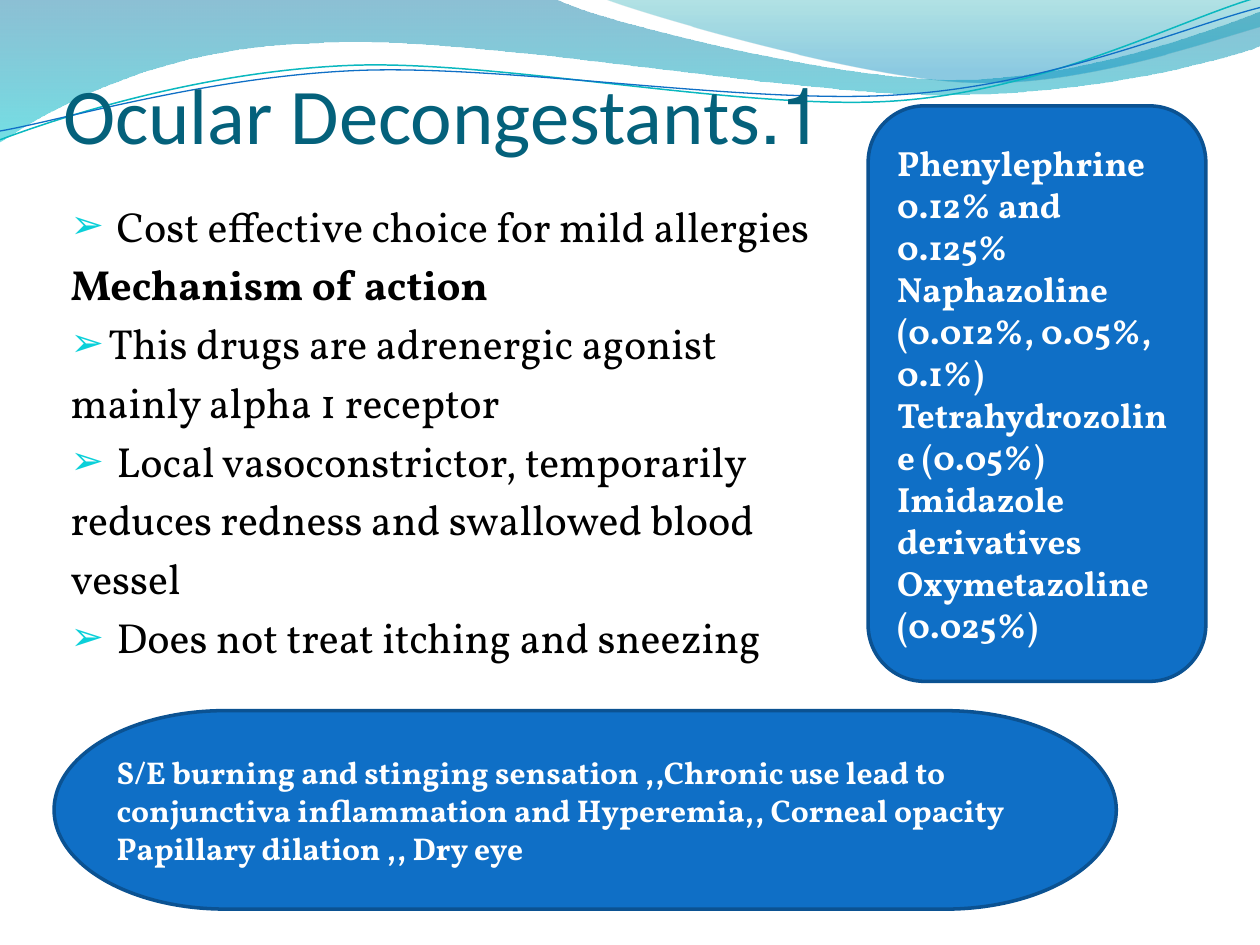
from lxml.etree import Element, SubElement
from pptx import Presentation
from pptx.dml.color import RGBColor
from pptx.enum.shapes import MSO_SHAPE as Preset
from pptx.enum.text import MSO_ANCHOR as Anchor, MSO_AUTO_SIZE as AutoSize, PP_ALIGN as Align
from pptx.oxml.ns import qn
from pptx.util import Inches, Pt

WIDTH, HEIGHT = Inches(10), Inches(7.5)
BLUE, BLUE_EDGE, WHITE = "0F6FC6", "0B5292", "FFFFFF"

TOP_WAVE = [
    (0, 0), (4.4, -0.01),
    (4.76, 0.17, 6.64, 0.63, 7.58, 0.63), (8.53, 0.63, 9.58, 0.26, 10, 0.09),
    (10.01, 0.36),
    (9.83, 0.44, 8.7, 0.76, 7.46, 0.75), (6.22, 0.75, 3.82, 0.28, 2.57, 0.34),
    (1.29, 0.36, 0.46, 0.83, -0.01, 1.13),
]
RIGHT_WAVE = [
    (4.79, -0.01),
    (5.09, 0.11, 6.82, 0.62, 7.69, 0.65), (8.56, 0.69, 9.61, 0.32, 10, 0.21),
    (10, 0),
]
TEAL_CURVE = [
    (0, 1.11),
    (0.48, 0.93, 1.58, 0.57, 2.77, 0.52), (3.95, 0.47, 5.93, 0.89, 7.13, 0.8),
    (8.33, 0.71, 9.38, 0.15, 9.98, -0.02),
]
BLUE_CURVE = [
    (0, 1.04),
    (0.47, 0.96, 1.64, 0.61, 2.83, 0.56), (4.03, 0.51, 5.97, 0.84, 7.17, 0.75),
    (8.36, 0.67, 9.41, 0.21, 10, 0.06),
]
BODY = [
    (" Cost effective choice for mild allergies", True, False),
    ("Mechanism of action", False, True),
    ("This drugs are adrenergic agonist", True, False),
    ("mainly alpha 1 receptor", False, False),
    (" Local vasoconstrictor, temporarily", True, False),
    ("reduces redness and swallowed blood", False, False),
    ("vessel", False, False),
    (" Does not treat itching and sneezing", True, False),
]
DRUGS = [
    "Phenylephrine 0.12% and 0.125%",
    "Naphazoline (0.012%, 0.05%, 0.1%) Tetrahydrozoline (0.05%) Imidazole derivatives",
    "Oxymetazoline (0.025%)",
]
SIDE_EFFECTS = [
    "S/E burning and stinging sensation ,,Chronic use lead to conjunctiva "
    "inflammation and Hyperemia,, Corneal opacity Papillary dilation ,, Dry eye",
]


def color(value):
    return RGBColor.from_string(value)


def apply(target, formats):
    for name, value in formats.items():
        setattr(target, name, value)


def share(left, top, width, height):
    return [int(WIDTH * left), int(HEIGHT * top), int(WIDTH * width), int(HEIGHT * height)]


def set_font(paragraph, name, size, value, bold=False):
    apply(paragraph.font, {"name": name, "size": Pt(size), "bold": bold})
    paragraph.font.color.rgb = color(value)


def set_right_to_left(paragraph):
    paragraph.alignment = Align.LEFT
    paragraph._p.get_or_add_pPr().set("rtl", "1")


def set_bullet(paragraph, bulleted):
    properties = paragraph._p.get_or_add_pPr()
    indent = Inches(0.3) if bulleted else 0
    properties.set("marL", str(indent))
    properties.set("indent", str(-indent))
    if not bulleted:
        SubElement(properties, qn("a:buNone"))
        return
    tint = SubElement(properties, qn("a:buClr"))
    SubElement(tint, qn("a:srgbClr"), val="0BD0D9")
    SubElement(properties, qn("a:buSzPct"), val="95000")
    SubElement(properties, qn("a:buChar"), char="➢")


def bend(shape, segments):
    lines = shape._element.spPr.iter(qn("a:lnTo"))
    remaining = list(lines)
    for segment in segments:
        count = len(segment) // 2
        group, remaining = remaining[:count], remaining[count:]
        if count == 3:
            curve = Element(qn("a:cubicBezTo"))
            group[0].addprevious(curve)
            for line in group:
                curve.append(line[0])
                line.getparent().remove(line)


def add_outline(slide, segments, close):
    points = [(Inches(x), Inches(y)) for segment in segments
              for x, y in zip(segment[::2], segment[1::2])]
    builder = slide.shapes.build_freeform(*points[0])
    builder.add_line_segments(points[1:], close=close)
    shape = builder.convert_to_shape()
    bend(shape, segments[1:])
    shape.shadow.inherit = False
    return shape


def add_wave(slide, segments, stops):
    shape = add_outline(slide, segments, True)
    shape.line.fill.background()
    shape.fill.gradient()
    shape.fill.gradient_angle = 270
    for stop, (position, value, opacity) in zip(shape.fill.gradient_stops, stops):
        stop.position = position
        stop.color.rgb = color(value)
    tints = shape._element.spPr.iter(qn("a:srgbClr"))
    for tint, (position, value, opacity) in zip(tints, stops):
        SubElement(tint, qn("a:alpha"), val=str(opacity * 1000))


def add_curve(slide, segments, value, width):
    shape = add_outline(slide, segments, False)
    shape.fill.background()
    shape.line.color.rgb = color(value)
    shape.line.width = Pt(width)


def place(shape, box, formats):
    apply(shape, dict(zip(("left", "top", "width", "height"), share(*box))))
    apply(shape.text_frame, {"word_wrap": True, "auto_size": AutoSize.NONE, **formats})
    parent = shape._element.getparent()
    parent.append(shape._element)


def fill_title(title):
    place(title, (0.05, 0.103, 0.9, 0.167), {
        "vertical_anchor": Anchor.BOTTOM, "margin_left": 0, "margin_right": 0,
        "margin_bottom": Inches(0.75)})
    title.text_frame.text = "1.Ocular Decongestants"
    paragraph = title.text_frame.paragraphs[0]
    set_right_to_left(paragraph)
    set_font(paragraph, "Calibri", 45, "04617B")


def fill_body(body):
    place(body, (0.046, 0.205, 0.9, 0.64), {"vertical_anchor": Anchor.TOP})
    frame = body.text_frame
    frame.text = "\n".join(text for text, bulleted, bold in BODY)
    for index, (paragraph, (text, bulleted, bold)) in enumerate(zip(frame.paragraphs, BODY)):
        paragraph.space_before = Pt(4.8 if index else 0)
        set_bullet(paragraph, bulleted)
        set_font(paragraph, "Vollkorn", 24, "000000", bold)


def add_panel(slide, preset, box, lines, size):
    shape = slide.shapes.add_shape(preset, *share(*box))
    shape.shadow.inherit = False
    shape.fill.solid()
    shape.fill.fore_color.rgb = color(BLUE)
    shape.line.color.rgb = color(BLUE_EDGE)
    shape.line.width = Pt(2)
    frame = shape.text_frame
    apply(frame, {"word_wrap": True, "vertical_anchor": Anchor.MIDDLE})
    frame.text = "\n".join(lines)
    for paragraph in frame.paragraphs:
        set_right_to_left(paragraph)
        set_font(paragraph, "Vollkorn", size, WHITE, True)


def main():
    presentation = Presentation()
    apply(presentation, {"slide_width": WIDTH, "slide_height": HEIGHT})
    slide = presentation.slides.add_slide(presentation.slide_layouts[1])
    add_wave(slide, TOP_WAVE, [(0, "0074A1", 45), (1, "00C6CF", 55)])
    add_wave(slide, RIGHT_WAVE, [(0, "00A1A9", 30), (0.8, "008BBF", 45)])
    add_curve(slide, TEAL_CURVE, "0AB8BF", 0.85)
    add_curve(slide, BLUE_CURVE, BLUE, 0.75)
    fill_title(slide.shapes.title)
    fill_body(slide.placeholders[1])
    add_panel(slide, Preset.ROUNDED_RECTANGLE, (0.689, 0.112, 0.268, 0.609), DRUGS, 20)
    add_panel(slide, Preset.FLOWCHART_TERMINATOR, (0.043, 0.752, 0.843, 0.21), SIDE_EFFECTS, 18)
    presentation.save("out.pptx")


if __name__ == "__main__":
    main()
